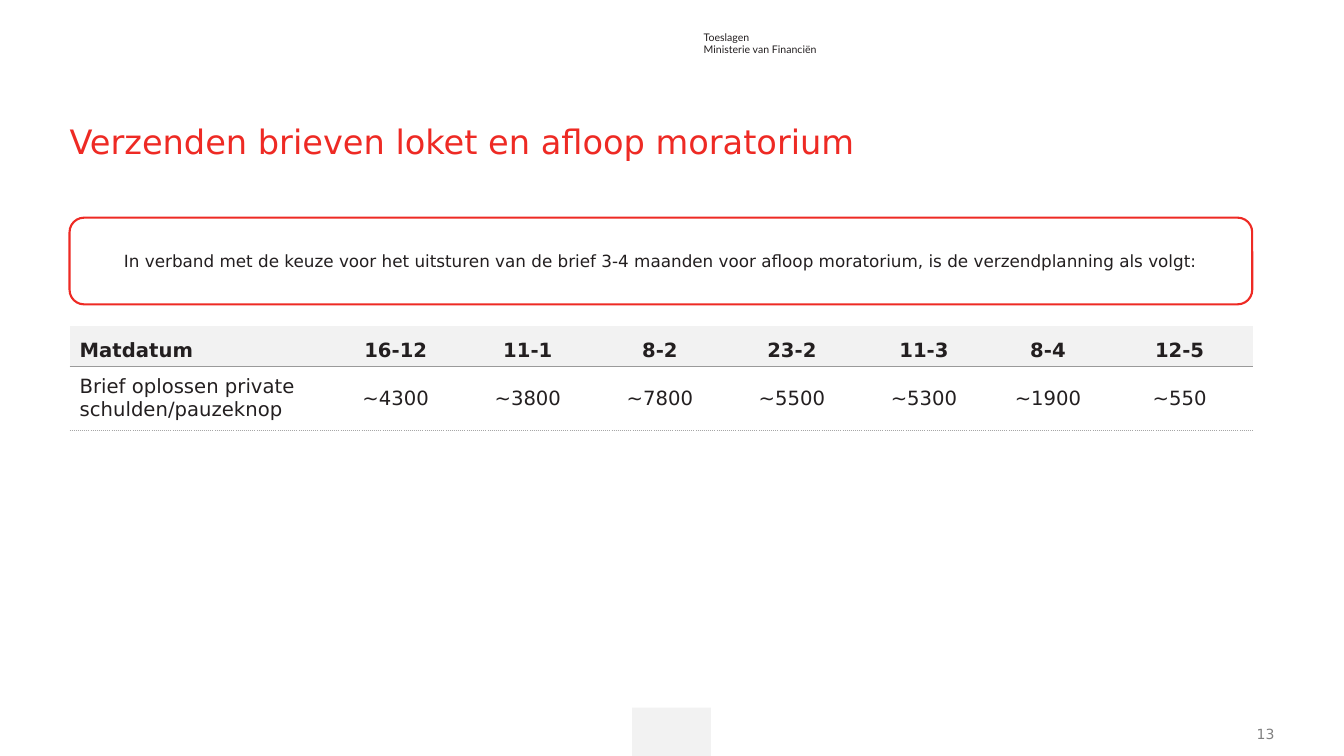
from dataclasses import dataclass

from lxml import etree
from pptx import Presentation
from pptx.dml.color import RGBColor
from pptx.enum.shapes import MSO_SHAPE
from pptx.enum.text import MSO_ANCHOR, PP_ALIGN
from pptx.oxml.ns import qn
from pptx.util import Emu, Pt

PX = 9144  # EMU per px, 100 px to the inch
LEFT, MID, RIGHT = PP_ALIGN.LEFT, PP_ALIGN.CENTER, PP_ALIGN.RIGHT
TOP, CENTRE, BASE = MSO_ANCHOR.TOP, MSO_ANCHOR.MIDDLE, MSO_ANCHOR.BOTTOM
RECT, ROUND = MSO_SHAPE.RECTANGLE, MSO_SHAPE.ROUNDED_RECTANGLE


@dataclass(frozen=True)
class Theme:
    ink: str = "231F20"
    red: str = "EE2A24"
    grey: str = "808080"
    pale: str = "F2F2F2"
    rule: str = "9A9A9A"
    dots: str = "A6A6A6"
    font: str = "DejaVu Sans"
    brand: str = "Lato"
    title: float = 24
    cell: float = 14
    body: float = 12
    page: float = 10
    small: float = 7.5


@dataclass(frozen=True)
class Box:
    x: int
    y: int
    w: int
    h: int

    def emu(self) -> tuple[Emu, ...]:
        return tuple(Emu(n * PX) for n in (self.x, self.y, self.w, self.h))


@dataclass(frozen=True)
class Edge:
    colour: str
    width: float
    dash: str = "solid"


@dataclass(frozen=True)
class Row:
    height: int
    texts: tuple[str, ...]
    anchor: MSO_ANCHOR
    bold: bool
    fill: str | None
    top: Edge | None
    base: Edge


T = Theme()
RULE = Edge(T.rule, 0.75)
DOTS = Edge(T.dots, 0.5, "sysDot")
WIDTHS = (258, *[131] * 5, 115, 146)
ROWS = (
    Row(41, ("Matdatum", "16-12", "11-1", "8-2", "23-2", "11-3", "8-4", "12-5"),
        BASE, True, T.pale, None, RULE),
    Row(63, ("Brief oplossen private schulden/pauzeknop", "~4300", "~3800",
             "~7800", "~5500", "~5300", "~1900", "~550"),
        CENTRE, False, None, RULE, DOTS),
)


def write(frame, text: str, *, size: float, colour: str = T.ink,
          font: str = T.font, bold: bool = False, align: PP_ALIGN = LEFT,
          space: float | None = None) -> None:
    """Fill a text frame, one paragraph for each line of text."""
    frame.word_wrap = True
    for i, line in enumerate(text.split("\n")):
        para = frame.add_paragraph() if i else frame.paragraphs[0]
        para.alignment = align
        para.line_spacing = space
        run = para.add_run()
        run.text = line
        run.font.name, run.font.size, run.font.bold = font, Pt(size), bold
        run.font.color.rgb = RGBColor.from_string(colour)


def label(slide, box: Box, text: str, *, anchor: MSO_ANCHOR = TOP,
          inset: bool = False, **style) -> None:
    frame = slide.shapes.add_textbox(*box.emu()).text_frame
    frame.vertical_anchor = anchor
    if not inset:
        frame.margin_left = frame.margin_right = 0
        frame.margin_top = frame.margin_bottom = 0
    write(frame, text, **style)


def paint(fill, colour: str | None) -> None:
    if colour:
        fill.solid()
        fill.fore_color.rgb = RGBColor.from_string(colour)
    else:
        fill.background()


def panel(slide, kind: MSO_SHAPE, box: Box, *, fill: str | None = None,
          edge: Edge | None = None):
    shape = slide.shapes.add_shape(kind, *box.emu())
    shape.shadow.inherit = False
    paint(shape.fill, fill)
    paint(shape.line.fill, edge.colour if edge else None)
    if edge:
        shape.line.width = Pt(edge.width)
    return shape


def border(cell, side: str, edge: Edge | None) -> None:
    props = cell._tc.get_or_add_tcPr()
    line = etree.SubElement(props, qn(f"a:ln{side}"))
    if edge is None:
        etree.SubElement(line, qn("a:noFill"))
        return
    line.set("w", str(Pt(edge.width)))
    solid = etree.SubElement(line, qn("a:solidFill"))
    etree.SubElement(solid, qn("a:srgbClr"), val=edge.colour)
    etree.SubElement(line, qn("a:prstDash"), val=edge.dash)


def grid(slide, box: Box) -> None:
    table = slide.shapes.add_table(len(ROWS), len(WIDTHS), *box.emu()).table
    table.horz_banding = False
    for col, width in zip(table.columns, WIDTHS):
        col.width = Emu(width * PX)
    for r, row in enumerate(ROWS):
        table.rows[r].height = Emu(row.height * PX)
        for c, text in enumerate(row.texts):
            cell = table.cell(r, c)
            cell.vertical_anchor = row.anchor
            edges = {"L": None, "R": None, "T": row.top, "B": row.base}
            for side, edge in edges.items():
                border(cell, side, edge)
            paint(cell.fill, row.fill)
            write(cell.text_frame, text, size=T.cell, bold=row.bold,
                  align=MID if c else LEFT)


def main() -> None:
    deck = Presentation()
    deck.slide_width, deck.slide_height = Emu(1333 * PX), Emu(750 * PX)
    slide = deck.slides.add_slide(deck.slide_layouts[6])

    # Page frame: number, sender and footer block
    label(slide, Box(717, 719, 547, 17), "13", anchor=BASE, size=T.page,
          colour=T.grey, align=RIGHT)
    label(slide, Box(688, 24, 135, 38), "Toeslagen\nMinisterie van Financiën",
          anchor=CENTRE, inset=True, size=T.small, font=T.brand)
    panel(slide, RECT, Box(627, 702, 78, 48), fill=T.pale)

    # Mailing plan
    grid(slide, Box(69, 323, sum(WIDTHS), sum(row.height for row in ROWS)))

    # Introduction
    intro = panel(slide, ROUND, Box(69, 216, 1173, 86), edge=Edge(T.red, 1.5))
    intro.text_frame.vertical_anchor = CENTRE
    write(intro.text_frame,
          "In verband met de keuze voor het uitsturen van de brief 3-4 maanden "
          "voor afloop moratorium, is de verzendplanning als volgt:",
          size=T.body, align=MID)

    # Title
    label(slide, Box(69, 124, 1196, 36),
          "Verzenden brieven loket en afloop moratorium",
          size=T.title, colour=T.red, space=0.9)

    deck.save("out.pptx")


if __name__ == "__main__":
    main()
